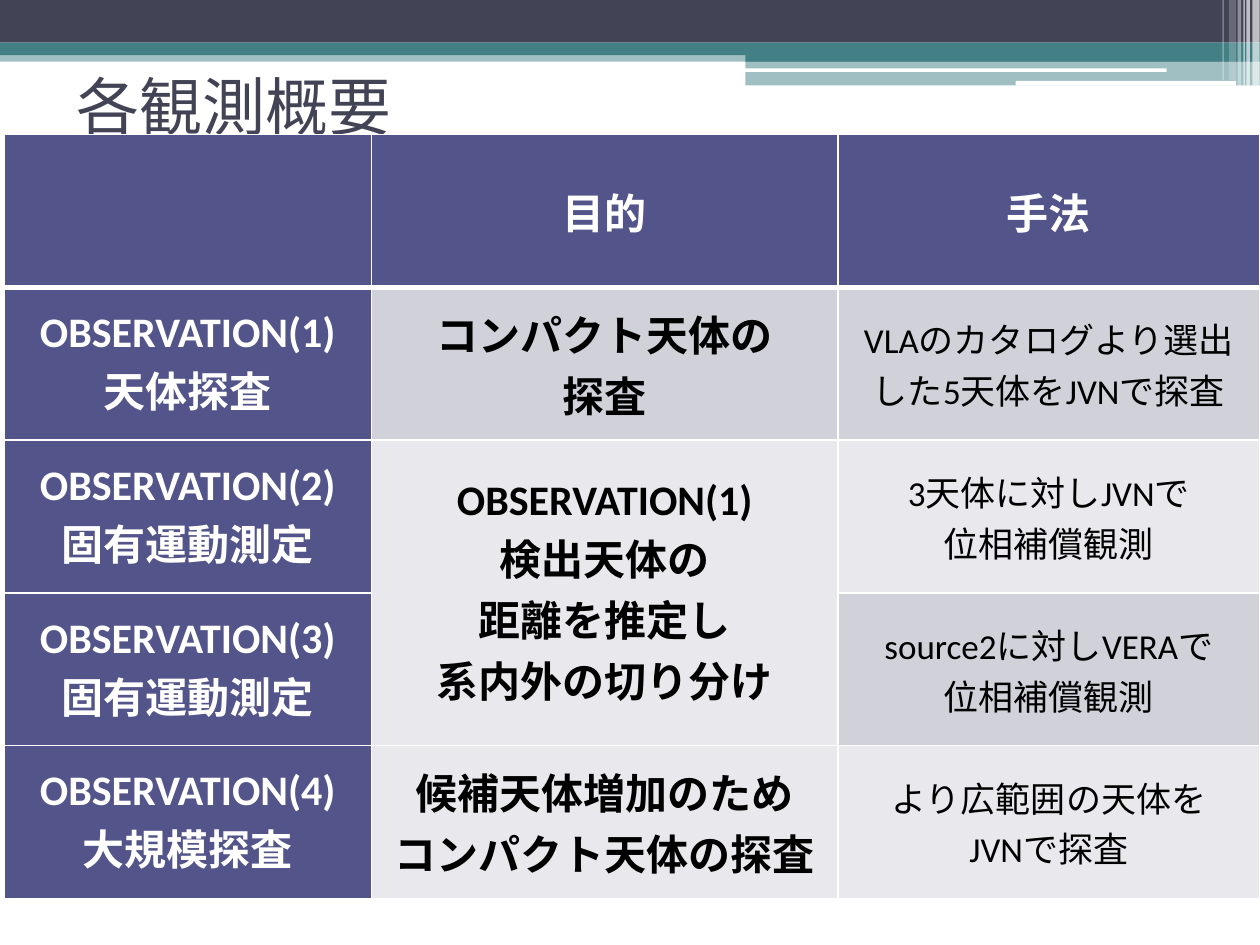
from dataclasses import dataclass

from lxml import etree
from pptx import Presentation
from pptx.dml import color
from pptx.enum import shapes, text
from pptx.oxml import ns
from pptx.util import Pt


@dataclass(frozen=True)
class Theme:
    font: str = "Calibri"
    navy: str = "424456"
    teal: str = "438086"
    white: str = "FFFFFF"
    black: str = "000000"
    header: str = "53548A"
    bands: tuple = ("D1D1DA", "E9E9ED")
    title_size: float = 36
    heading_size: float = 24
    body_size: float = 20
    rule: float = 1
    header_rule: float = 3


THEME = Theme()
RECTANGLE = shapes.MSO_SHAPE.RECTANGLE
ROUNDED = shapes.MSO_SHAPE.ROUNDED_RECTANGLE

BANNER_PARTS = [
    (RECTANGLE, 0, 28.8, 720, 6.5, THEME.teal, 50),
    (RECTANGLE, 0, 0, 720, 24.4, THEME.navy, 100),
    (RECTANGLE, 0, 24.4, 720, 7.2, THEME.teal, 100),
    (RECTANGLE, 426, 28.2, 294, 7, THEME.teal, 100),
    (RECTANGLE, 426, 34.8, 294, 14, THEME.teal, 50),
    (ROUNDED, 425.5, 39.1, 241.2, 2, THEME.white, 100),
    (ROUNDED, 580.4, 46.2, 126, 2.7, THEME.white, 100),
]
STRIPES = [
    (715.7, 4.1, 48.9, 65),
    (712.2, 2, 48.9, 65),
    (710.6, 0.8, 48.9, 60),
    (707.2, 2, 48.9, 40),
    (702.2, 4.1, 46, 20),
    (698.6, 0.8, 46, 30),
]

ROWS = [
    ("", "目的", "手法"),
    ("OBSERVATION(1)\n天体探査", "コンパクト天体の\n探査",
     "VLAのカタログより選出した5天体をJVNで探査"),
    ("OBSERVATION(2)\n固有運動測定",
     "OBSERVATION(1)\n検出天体の\n距離を推定し\n系内外の切り分け",
     "3天体に対しJVNで\n位相補償観測"),
    ("OBSERVATION(3)\n固有運動測定", "", "source2に対しVERAで\n位相補償観測"),
    ("OBSERVATION(4)\n大規模探査", "候補天体増加のため\nコンパクト天体の探査",
     "より広範囲の天体を\nJVNで探査"),
]
COLUMN_WIDTHS = (210.2, 266.4, 241.2)


def rgb(value):
    return color.RGBColor.from_string(value)


def format_paragraph(paragraph, size, ink, bold, alignment):
    paragraph.alignment = alignment
    for font in [paragraph.font] + [run.font for run in paragraph.runs]:
        font.name = THEME.font
        font.size = Pt(size)
        font.bold = bold
        font.color.rgb = rgb(ink)


def add_block(slide, kind, left, top, width, height, fill, opacity):
    shape = slide.shapes.add_shape(kind, Pt(left), Pt(top), Pt(width), Pt(height))
    shape.shadow.inherit = False
    shape.line.fill.background()
    shape.fill.solid()
    shape.fill.fore_color.rgb = rgb(fill)
    if opacity < 100:
        tint = shape.fill._xPr.find(f".//{ns.qn('a:srgbClr')}")
        etree.SubElement(tint, ns.qn("a:alpha"), val=str(opacity * 1000))


def add_banner(slide, left, top):
    for kind, x, y, width, height, fill, opacity in BANNER_PARTS:
        add_block(slide, kind, left + x, top + y, width, height, fill, opacity)
    for x, width, height, opacity in STRIPES:
        add_block(slide, RECTANGLE, left + x, top, width, height, THEME.white, opacity)


def add_title(slide, left, top, width, height, wording):
    frame = slide.shapes.add_textbox(Pt(left), Pt(top), Pt(width), Pt(height)).text_frame
    frame.word_wrap = True
    frame.vertical_anchor = text.MSO_ANCHOR.MIDDLE
    frame.text = wording
    format_paragraph(frame.paragraphs[0], THEME.title_size, THEME.navy, False,
                     text.PP_ALIGN.LEFT)


def add_borders(cell, top, bottom):
    properties = cell._tc.get_or_add_tcPr()
    widths = {"L": THEME.rule, "R": THEME.rule, "T": top, "B": bottom}
    for side, width in widths.items():
        line = etree.SubElement(properties, ns.qn(f"a:ln{side}"), w=str(Pt(width)))
        fill = etree.SubElement(line, ns.qn("a:solidFill"))
        etree.SubElement(fill, ns.qn("a:srgbClr"), val=THEME.white)


def format_cell(cell, row, column, wording):
    heading = row == 0 or column == 0
    add_borders(cell,
                THEME.header_rule if row == 1 else THEME.rule,
                THEME.header_rule if row == 0 else THEME.rule)
    cell.fill.solid()
    band = 1 if column == 1 and row > 1 else (row - 1) % 2
    cell.fill.fore_color.rgb = rgb(THEME.header if heading else THEME.bands[band])
    cell.vertical_anchor = text.MSO_ANCHOR.MIDDLE
    cell.text_frame.text = wording
    bold = heading or column == 1
    for paragraph in cell.text_frame.paragraphs:
        format_paragraph(paragraph,
                         THEME.heading_size if bold else THEME.body_size,
                         THEME.white if heading else THEME.black,
                         bold, text.PP_ALIGN.CENTER)


def add_overview_table(slide, left, top, height):
    frame = slide.shapes.add_table(len(ROWS), len(COLUMN_WIDTHS), Pt(left), Pt(top),
                                   Pt(sum(COLUMN_WIDTHS)), Pt(height))
    table = frame.table
    for column, width in zip(table.columns, COLUMN_WIDTHS):
        column.width = Pt(width)
    for row in table.rows:
        row.height = Pt(height / len(ROWS))
    for row, wordings in enumerate(ROWS):
        for column, wording in enumerate(wordings):
            format_cell(table.cell(row, column), row, column, wording)
    table.cell(2, 1).merge(table.cell(3, 1))


def main():
    presentation = Presentation()
    presentation.slide_width = Pt(720)
    presentation.slide_height = Pt(540)
    slide = presentation.slides.add_slide(presentation.slide_layouts[6])
    add_banner(slide, 0, 0)
    add_title(slide, 36.7, 15.1, 648, 90, "各観測概要")
    add_overview_table(slide, 2.2, 77, 436.4)
    presentation.save("out.pptx")


if __name__ == "__main__":
    main()
